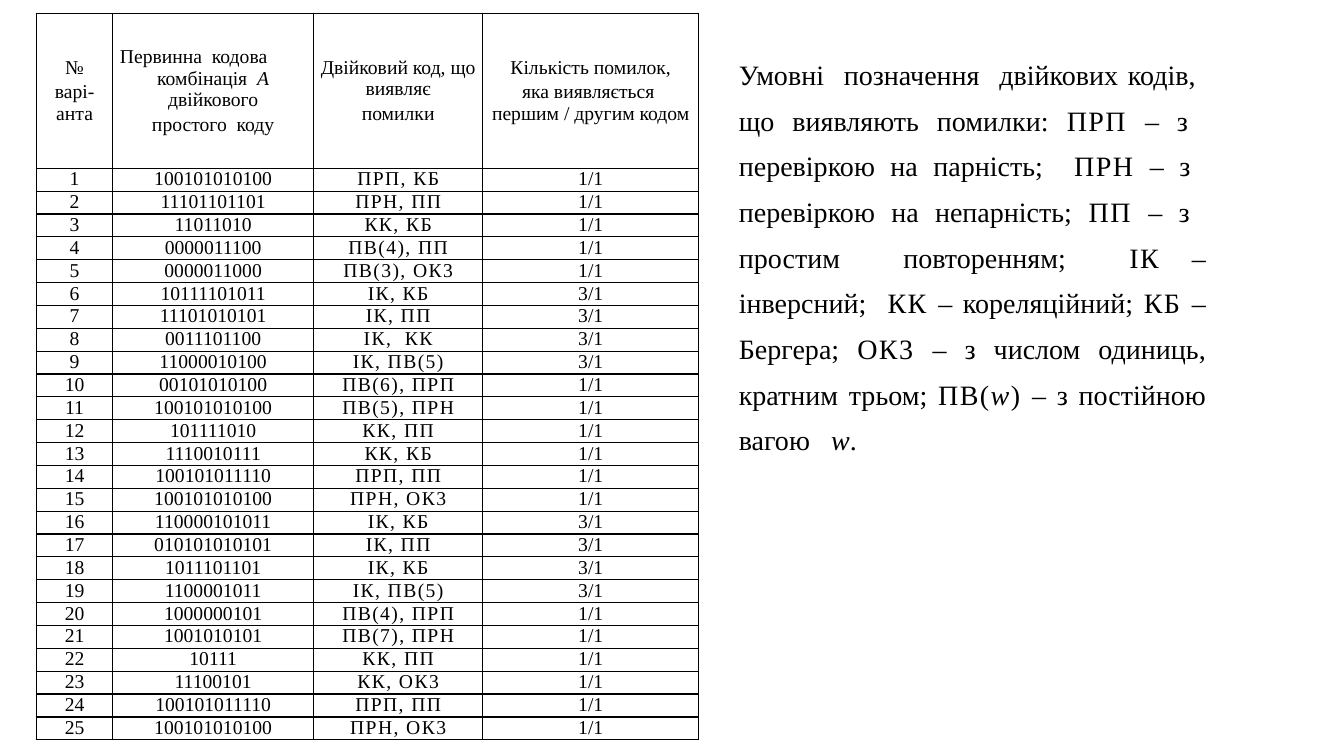
from lxml import etree
from pptx import Presentation
from pptx import util as u
from pptx.dml.color import RGBColor
from pptx.enum import text
from pptx.oxml import ns

FONT = "Times New Roman"
INK = "000000"
COLS = [0.76, 1.99, 1.68, 2.14]
HEADER_H = 1.54
CENTER = text.PP_ALIGN.CENTER
LEFT = text.PP_ALIGN.LEFT

HEADERS = [
    [(CENTER, 2, ["№"]), (CENTER, 2, ["варі-анта"])],
    [(LEFT, 2, ["Первинна  кодова"]),
     (CENTER, 0, ["комбінація  ", ("А", "i"), " двійкового"]),
     (CENTER, 2, ["простого  коду"])],
    [(CENTER, 2, ["Двійковий код, що виявляє"]), (CENTER, 2, ["помилки"])],
    [(CENTER, 2, ["Кількість помилок,"]),
     (CENTER, 2, ["яка виявляється  першим / другим кодом"])],
]

VARIANTS = [
    ("100101010100", "ПРП, КБ", "1/1"),
    ("11101101101", "ПРН, ПП", "1/1"),
    ("11011010", "КК, КБ", "1/1"),
    ("0000011100", "ПВ(4), ПП", "1/1"),
    ("0000011000", "ПВ(3), ОК3", "1/1"),
    ("10111101011", "ІК, КБ", "3/1"),
    ("11101010101", "ІК, ПП", "3/1"),
    ("0011101100", "ІК,  КК", "3/1"),
    ("11000010100", "ІК, ПВ(5)", "3/1"),
    ("00101010100", "ПВ(6), ПРП", "1/1"),
    ("100101010100", "ПВ(5), ПРН", "1/1"),
    ("101111010", "КК, ПП", "1/1"),
    ("1110010111", "КК, КБ", "1/1"),
    ("100101011110", "ПРП, ПП", "1/1"),
    ("100101010100", "ПРН, ОК3", "1/1"),
    ("110000101011", "ІК, КБ", "3/1"),
    ("010101010101", "ІК, ПП", "3/1"),
    ("1011101101", "ІК, КБ", "3/1"),
    ("1100001011", "ІК, ПВ(5)", "3/1"),
    ("1000000101", "ПВ(4), ПРП", "1/1"),
    ("1001010101", "ПВ(7), ПРН", "1/1"),
    ("10111", "КК, ПП", "1/1"),
    ("11100101", "КК, ОК3", "1/1"),
    ("100101011110", "ПРП, ПП", "1/1"),
    ("100101010100", "ПРН, ОК3", "1/1"),
]

LEGEND = [
    "Умовні  позначення  двійкових кодів,  що виявляють помилки: ",
    ("ПРП", "s"), " – з  перевіркою на парність;  ",
    ("ПРН", "s"), " – з  перевіркою на непарність; ",
    ("ПП", "s"), " – з  простим  повторенням;  ",
    ("ІК", "s"), " – інверсний;  ",
    ("КК", "s"), " – кореляційний; ",
    ("КБ", "s"), " – Бергера; ",
    ("ОК3", "s"), " – з числом одиниць, кратним трьом; ",
    ("ПВ(", "s"), ("w", "si"), (")", "s"), " – з постійною вагою   ",
    ("w", "i"), ".",
]


def rgb(color):
    return RGBColor.from_string(color)


def add_runs(p, parts, size):
    for part in parts:
        content, marks = (part, "") if isinstance(part, str) else part
        r = p.add_run()
        r.text = content
        r.font.name = FONT
        r.font.size = u.Pt(size)
        r.font.color.rgb = rgb(INK)
        if "i" in marks:
            r.font.italic = True
        if "s" in marks:
            r._r.get_or_add_rPr().set("spc", "100")


def add_borders(cell):
    tcPr = cell._tc.get_or_add_tcPr()
    for i, side in enumerate(("lnL", "lnR", "lnT", "lnB")):
        ln = etree.Element(ns.qn("a:" + side), w=str(u.Pt(1)))
        fill = etree.SubElement(ln, ns.qn("a:solidFill"))
        etree.SubElement(fill, ns.qn("a:srgbClr"), val=INK)
        tcPr.insert(i, ln)


def fill_cell(cell, paragraphs, anchor):
    cell.margin_left = cell.margin_right = u.Inches(0.07)
    cell.margin_top = cell.margin_bottom = 0
    cell.vertical_anchor = anchor
    cell.fill.background()
    add_borders(cell)
    tf = cell.text_frame
    for i, (align, before, parts) in enumerate(paragraphs):
        p = tf.add_paragraph() if i else tf.paragraphs[0]
        p.alignment = align
        p.space_before = u.Pt(before)
        add_runs(p, parts, 14)


def variants_table(s, x, y, w, h):
    tbl = s.shapes.add_table(len(VARIANTS) + 1, len(COLS), u.Inches(x),
                             u.Inches(y), u.Inches(w), u.Inches(h)).table
    tbl.first_row = tbl.horz_banding = False
    for col, width in zip(tbl.columns, COLS):
        col.width = u.Inches(width * w / sum(COLS))
    for i, row in enumerate(tbl.rows):
        row.height = u.Inches((h - HEADER_H) / len(VARIANTS) if i else HEADER_H)
    for j, paragraphs in enumerate(HEADERS):
        fill_cell(tbl.cell(0, j), paragraphs, text.MSO_ANCHOR.MIDDLE)
    for i, (code, methods, errors) in enumerate(VARIANTS, 1):
        for j, part in enumerate((str(i), code, (methods, "s"), errors)):
            fill_cell(tbl.cell(i, j), [(CENTER, 2, [part])], text.MSO_ANCHOR.TOP)


def legend(s, x, y, w, h):
    tf = s.shapes.add_textbox(u.Inches(x), u.Inches(y),
                              u.Inches(w), u.Inches(h)).text_frame
    tf.word_wrap = True
    p = tf.paragraphs[0]
    p.alignment = text.PP_ALIGN.JUSTIFY
    p.line_spacing = 1.36
    add_runs(p, LEGEND, 20)


def main():
    prs = Presentation()
    prs.slide_width, prs.slide_height = u.Inches(13.33), u.Inches(7.5)
    s = prs.slides.add_slide(prs.slide_layouts[6])
    variants_table(s, 0.36, 0.13, 6.57, 7.21)
    legend(s, 7.23, 0.4, 4.83, 4)
    prs.save("out.pptx")


if __name__ == "__main__":
    main()
